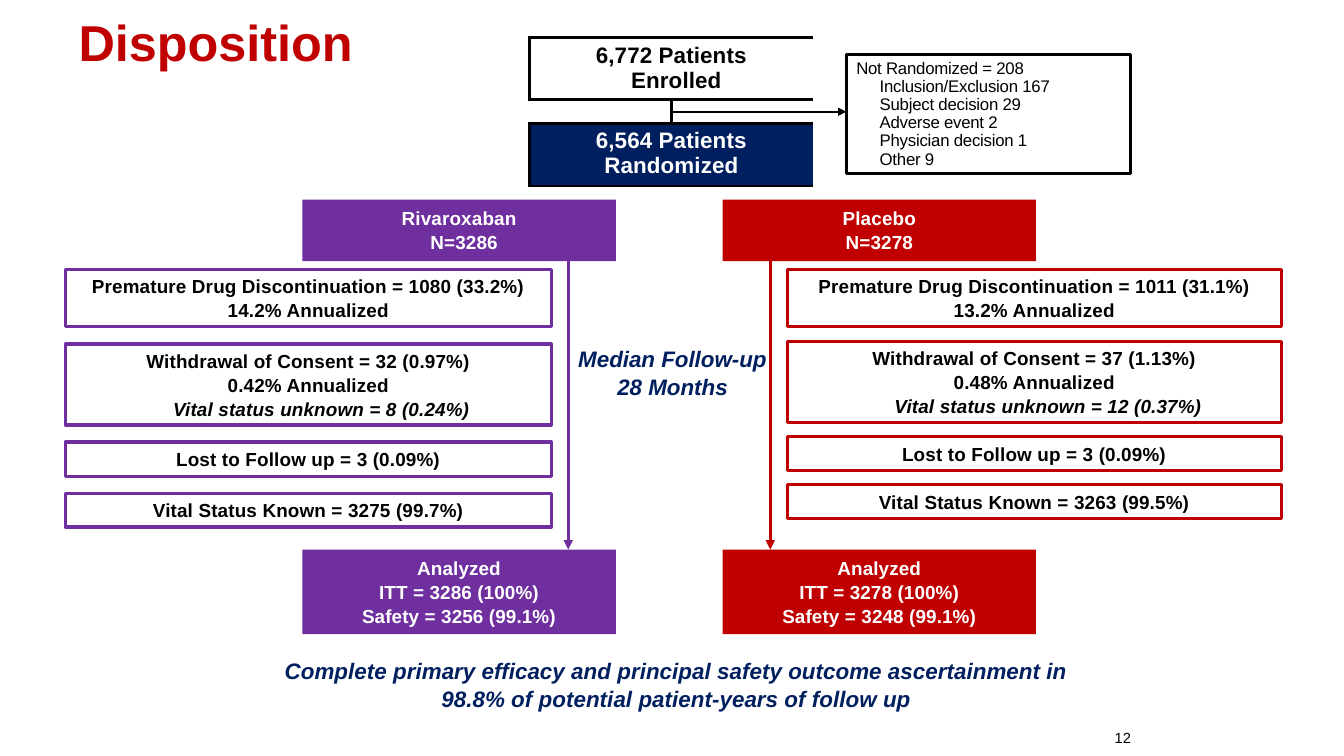
from lxml.etree import SubElement as Sub
from pptx import Presentation
from pptx.dml.color import RGBColor as RGB
from pptx.enum.shapes import MSO_CONNECTOR as Link, MSO_SHAPE as Shape
from pptx.enum.text import MSO_ANCHOR as Anchor, PP_ALIGN as Align
from pptx.oxml.ns import qn
from pptx.util import Cm, Pt

HUES = {"black": "000000", "white": "FFFFFF", "navy": "001F5F",
        "purple": "6F2F9F", "red": "C00000"}


def hue(name):
    return RGB.from_string(HUES[name])


def write(frame, lines, size, color, bold=True, italic=False, gap=1,
          align=Align.CENTER, track=0.15, pitch=None):
    """Fill a frame; a line is text or (text, indent in cm, italic)."""
    frame.word_wrap = True
    frame.vertical_anchor = Anchor.MIDDLE
    frame.margin_left = frame.margin_right = 0
    frame.margin_top = frame.margin_bottom = 0
    for i, line in enumerate(lines):
        text, dent, slant = (line, 0, italic) if isinstance(line, str) else line
        para = frame.paragraphs[0] if i == 0 else frame.add_paragraph()
        para.text = text
        para.alignment = align
        if dent:
            para._p.get_or_add_pPr().set("marL", str(Cm(dent)))
        if pitch:
            para.line_spacing = Pt(pitch)
        if i and gap:
            para.space_before = Pt(gap)
        font = para.font
        font.name, font.size = "Arial", Pt(size)
        font.bold, font.italic = bold, slant
        font.color.rgb = hue(color)
        font._element.set("spc", str(round(track * 100)))


def label(slide, box, lines, size, color, **style):
    area = slide.shapes.add_textbox(*map(Cm, box))
    write(area.text_frame, lines, size, color, **style)


def panel(slide, box, fill=None, line=None, weight=2.25):
    rect = slide.shapes.add_shape(Shape.RECTANGLE, *map(Cm, box))
    rect.shadow.inherit = False
    if fill:
        rect.fill.solid()
        rect.fill.fore_color.rgb = hue(fill)
    else:
        rect.fill.background()
    if line:
        rect.line.color.rgb = hue(line)
        rect.line.width = Pt(weight)
    else:
        rect.line.fill.background()
    return rect.text_frame


def arrow(slide, ends, color, weight):
    link = slide.shapes.add_connector(Link.STRAIGHT, *map(Cm, ends))
    link.line.color.rgb = hue(color)
    link.line.width = Pt(weight)
    Sub(link.line._get_or_add_ln(), qn("a:tailEnd"), type="triangle")
    Sub(link._element.spPr, qn("a:effectLst"))


def border(cell, sides):
    props = cell._tc.get_or_add_tcPr()
    for side in "LRTB":
        edge = Sub(props, qn("a:ln" + side), w=str(Pt(2.25)))
        if side in sides:
            paint = Sub(edge, qn("a:solidFill"))
            Sub(paint, qn("a:srgbClr"), val=HUES["black"])
        else:
            Sub(edge, qn("a:noFill"))


def intake(slide, box):
    """Enrolled and randomized counts, with the excluded patients beside."""
    left, top, width, height = box
    rows = [1.57, 0.61, 1.57]
    table = slide.shapes.add_table(3, 2, *map(Cm, box)).table
    table.first_row = table.horz_banding = False
    for col in table.columns:
        col.width = Cm(width / 2)
    for row, tall in zip(table.rows, rows):
        row.height = Cm(tall)

    # Cell edges: full boxes above and below, a stem between them
    edges = [("LTB", "RTB"), ("RTB", "LTB"), ("LTB", "RTB")]
    for r, pair in enumerate(edges):
        for c, sides in enumerate(pair):
            cell = table.cell(r, c)
            border(cell, sides)
            cell.margin_left = cell.margin_right = 0
            cell.margin_top = cell.margin_bottom = 0
            cell.fill.background()
            end = cell.text_frame.paragraphs[0]._p.get_or_add_endParaRPr()
            end.set("sz", "400")

    # Counts
    counts = [(0, ["6,772 Patients", ("Enrolled", 0.25, False)], "black"),
              (2, ["6,564 Patients", "Randomized"], "white")]
    for r, lines, color in counts:
        cell = table.cell(r, 0)
        cell.merge(table.cell(r, 1))
        write(cell.text_frame, lines, 16, color, gap=0, track=0.1, pitch=17.8)
        cell.vertical_anchor = Anchor.MIDDLE
    low = table.cell(2, 0)
    low.margin_bottom = Cm(0.1)
    low.fill.solid()
    low.fill.fore_color.rgb = hue("navy")

    # Excluded patients
    side = left + width + 0.83
    mid = top + rows[0] + rows[1] / 2
    arrow(slide, (left + width / 2, mid, side, mid), "black", 1.5)
    frame = panel(slide, (side, top + 0.43, 7.16, 3), line="black", weight=2)
    causes = ["Inclusion/Exclusion 167", "Subject decision 29",
              "Adverse event 2", "Physician decision 1", "Other 9"]
    lines = [("Not Randomized = 208", 0.25, False)]
    lines += [(cause, 0.84, False) for cause in causes]
    write(frame, lines, 12, "black", bold=False, gap=0, align=Align.LEFT,
          track=-0.17, pitch=13)


def arm(slide, box, color, flip, gap, head, steps, result):
    """One treatment arm; flip puts its centre-facing edge on the left."""
    left, top, width, height = box
    wide, inset = 7.9, 1.63
    block = left if flip else left + width - wide
    stem = left + 1.2 if flip else left + width - 1.2
    first = left + inset if flip else left

    # Head, arrow and result
    write(panel(slide, (block, top, wide, 1.55), fill=color),
          head, 13.5, "white")
    foot = top + height - 2.13
    arrow(slide, (stem, top + 1.5, stem, foot), color, 2.25)
    write(panel(slide, (block, foot, wide, 2.13), fill=color),
          result, 13.5, "white", track=0.1)

    # Stacked follow-up steps
    y = top + 1.76
    for lines, tall in zip(steps, [1.45, 2.04, 0.86, 0.85]):
        frame = panel(slide, (first, y, width - inset, tall), line=color)
        write(frame, lines, 13.5, "black")
        y += tall + gap


def build():
    deck = Presentation()
    deck.slide_width, deck.slide_height = Cm(33.87), Cm(19.05)
    slide = deck.slides.add_slide(deck.slide_layouts[6])

    label(slide, (1.98, 0.25, 8, 1.6), ["Disposition"], 36, "red",
          align=Align.LEFT, track=0)
    intake(slide, (13.34, 0.94, 7.16, 3.75))

    arm(slide, (1.65, 5.03, 13.87, 10.95), "purple", False, 0.43,
        ["Rivaroxaban", ("N=3286", 0.25, False)],
        [["Premature Drug Discontinuation = 1080 (33.2%)", "14.2% Annualized"],
         ["Withdrawal of Consent = 32 (0.97%)", "0.42% Annualized",
          ("Vital status unknown = 8 (0.24%)", 0.66, True)],
         ["Lost to Follow up = 3 (0.09%)"],
         ["Vital Status Known = 3275 (99.7%)"]],
        ["Analyzed", "ITT = 3286 (100%)", "Safety = 3256 (99.1%)"])
    arm(slide, (18.21, 5.03, 14.08, 10.95), "red", True, 0.36,
        ["Placebo", "N=3278"],
        [["Premature Drug Discontinuation = 1011 (31.1%)", "13.2% Annualized"],
         ["Withdrawal of Consent = 37 (1.13%)", "0.48% Annualized",
          ("Vital status unknown = 12 (0.37%)", 0.7, True)],
         ["Lost to Follow up = 3 (0.09%)"],
         ["Vital Status Known = 3263 (99.5%)"]],
        ["Analyzed", "ITT = 3278 (100%)", "Safety = 3248 (99.1%)"])

    # Follow-up time, conclusion and page number
    label(slide, (14.4, 8.59, 5.1, 1.6), ["Median Follow-up", "28 Months"],
          16, "navy", italic=True, track=0)
    label(slide, (6.6, 16.55, 20.9, 1.4),
          ["Complete primary efficacy and principal safety outcome "
           "ascertainment in",
           "98.8% of potential patient-years of follow up"],
          16, "navy", italic=True, track=0.05)
    label(slide, (27.9, 18.3, 0.8, 0.6), ["12"], 10.5, "black", bold=False,
          track=0.1)
    deck.save("out.pptx")


if __name__ == "__main__":
    build()
